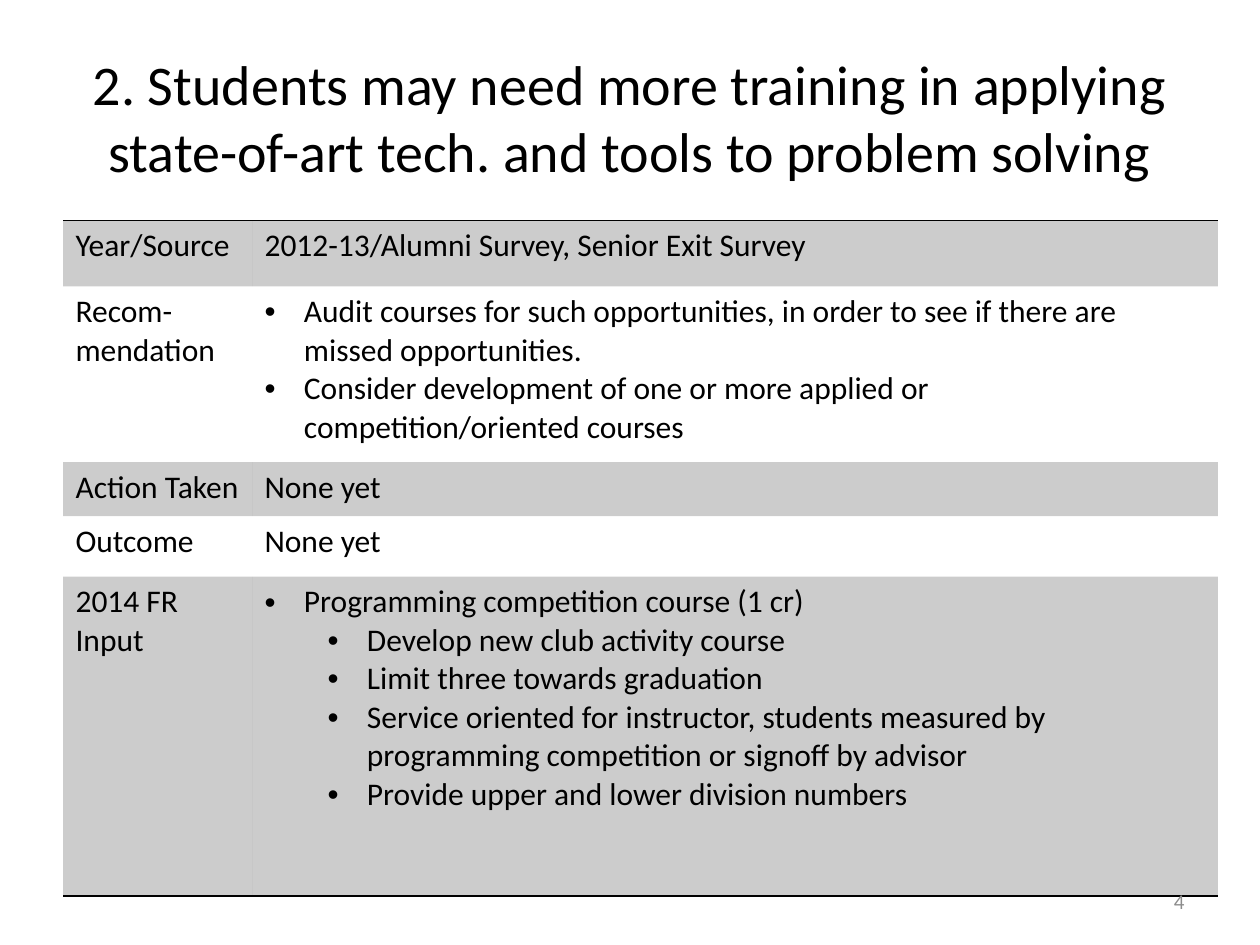
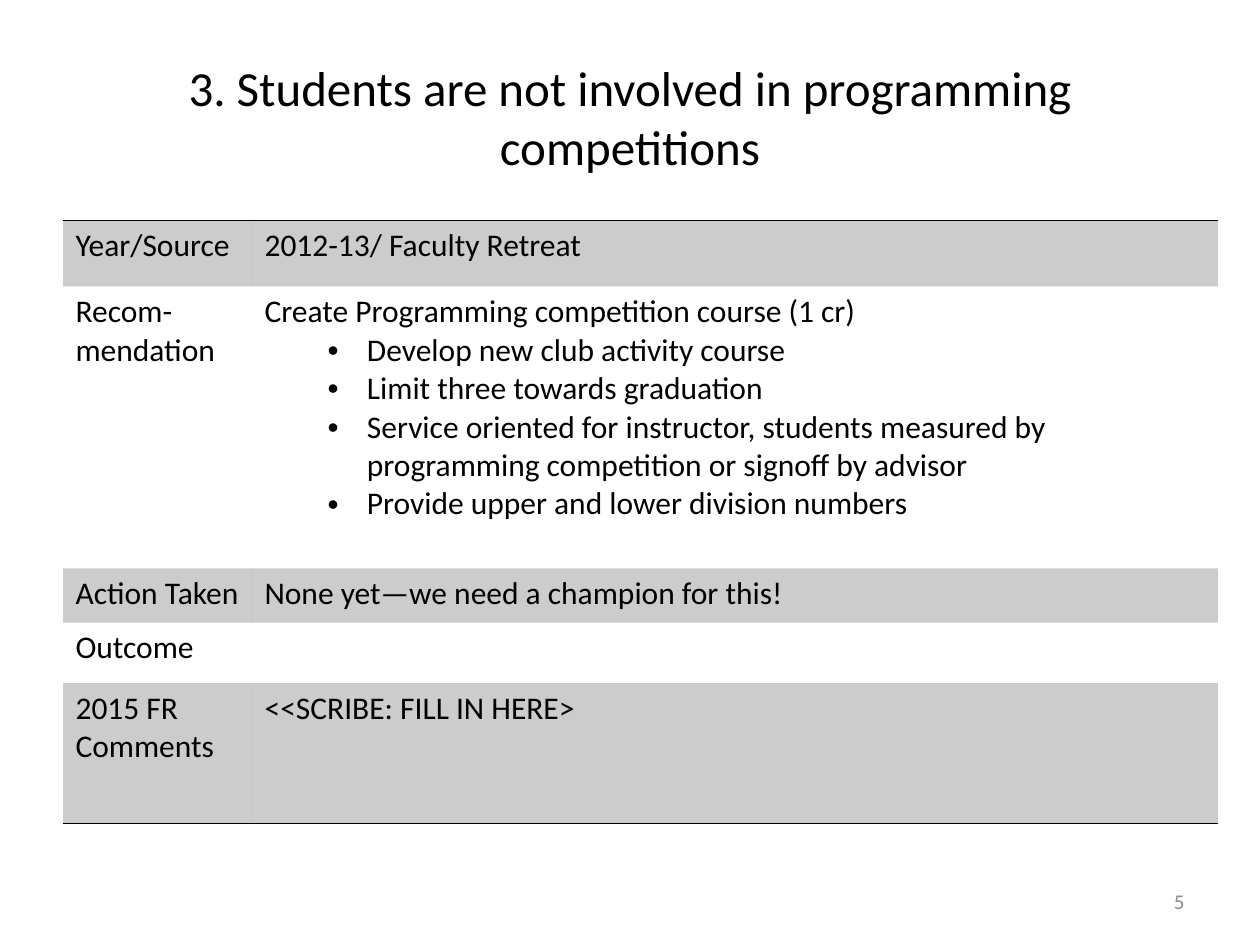
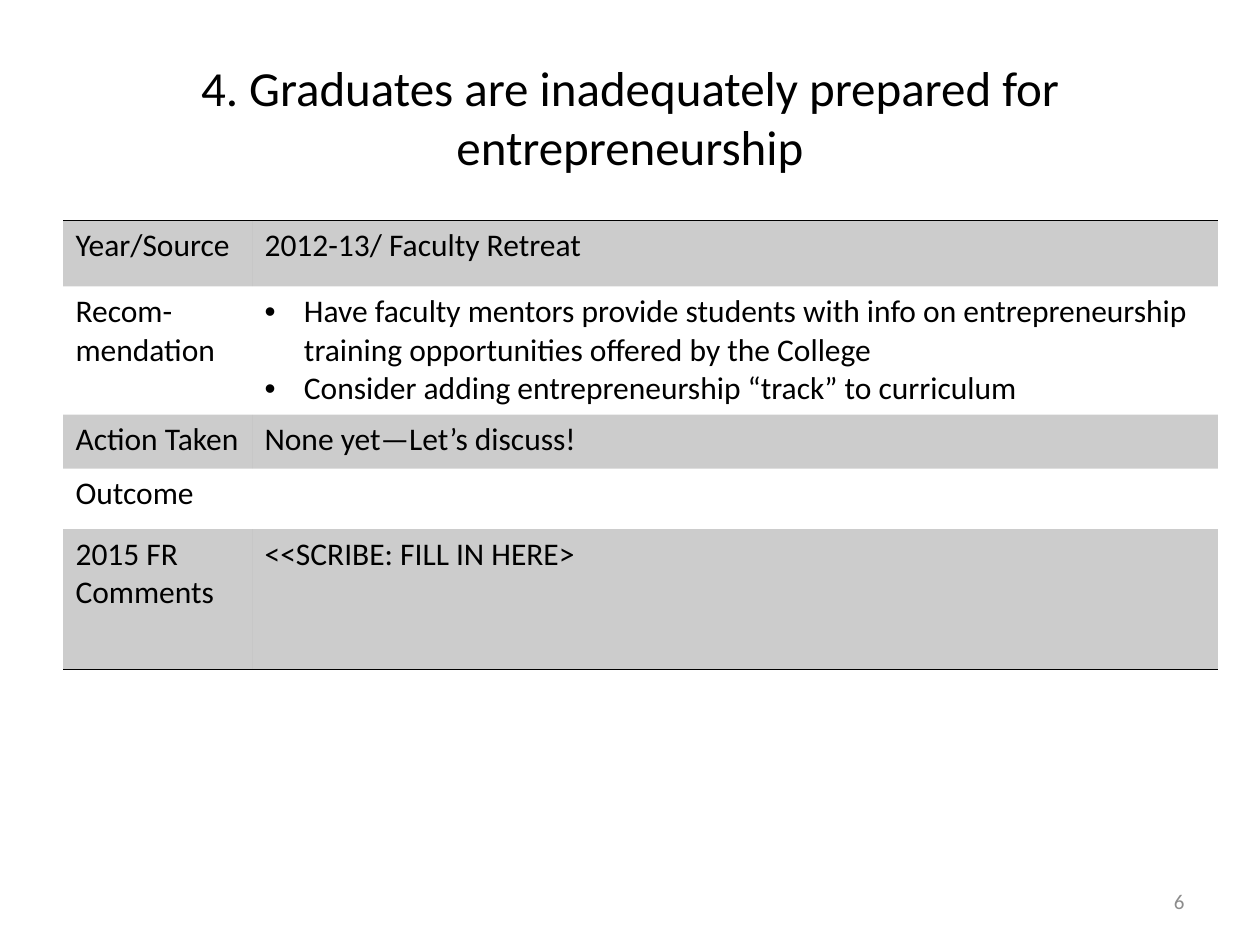
"""Build three faculty retreat slides, each tabulating one issue and its follow-up."""
from lxml import etree
from pptx import Presentation
from pptx.dml.color import RGBColor
from pptx.enum.text import MSO_ANCHOR, PP_ALIGN
from pptx.oxml.ns import qn
from pptx.util import Pt

MIDDLE = MSO_ANCHOR.MIDDLE
CENTER, RIGHT = PP_ALIGN.CENTER, PP_ALIGN.RIGHT
BLACK = RGBColor(0x00, 0x00, 0x00)
GREY = RGBColor(0x8C, 0x8C, 0x8C)
FONT = "Calibri"
NO_STYLE = "{2D5ABB26-0587-4C30-8999-92F81FD0307C}"
TITLE_ONLY = 5
PLAIN, BULLET, SUB_BULLET = range(3)
BULLET_MARGINS = {BULLET: 22.5, SUB_BULLET: 58.5}
BULLET_HANG = 22.5
COLUMN_WIDTHS = [108, 552]
FIRST_PAGE = 4

COMPETITION_STEPS = [
    (SUB_BULLET, "Develop new club activity course"),
    (SUB_BULLET, "Limit three towards graduation"),
    (SUB_BULLET, "Service oriented for instructor, students measured by "
                 "programming competition or signoff by advisor"),
    (SUB_BULLET, "Provide upper and lower division numbers"),
]

ISSUES = [
    {
        "title": "2. Students may need more training in applying "
                 "state-of-art tech. and tools to problem solving",
        "title_size": 32,
        "row_heights": [37.7, 100.4, 30.9, 34.6, 182.5],
        "source": "2012-13/Alumni Survey, Senior Exit Survey",
        "recommendation": [
            (BULLET, "Audit courses for such opportunities, in order to see "
                     "if there are missed opportunities."),
            (BULLET, "Consider development of one or more applied or "
                     "competition/oriented courses"),
        ],
        "action": "None yet",
        "outcome": "None yet",
        "retreat": "2014 FR Input",
        "comments": [(BULLET, "Programming competition course (1 cr)")] + COMPETITION_STEPS,
    },
    {
        "title": "3. Students are not involved in programming competitions",
        "title_size": 28,
        "row_heights": [37.7, 161.2, 30.9, 34.6, 80.2],
        "source": "2012-13/ Faculty Retreat",
        "recommendation": [(PLAIN, "Create Programming competition course (1 cr)")]
                          + COMPETITION_STEPS,
        "action": "None yet—we need a champion for this!",
        "outcome": "",
        "retreat": "2015 FR Comments",
        "comments": [(PLAIN, "<<SCRIBE: FILL IN HERE>")],
    },
    {
        "title": "4. Graduates are inadequately prepared for entrepreneurship",
        "title_size": 28,
        "row_heights": [37.7, 73.2, 30.9, 34.6, 80.2],
        "source": "2012-13/ Faculty Retreat",
        "recommendation": [
            (BULLET, "Have faculty mentors provide students with info on "
                     "entrepreneurship training opportunities offered by the College"),
            (BULLET, "Consider adding entrepreneurship “track” to curriculum"),
        ],
        "action": "None yet—Let’s discuss!",
        "outcome": "",
        "retreat": "2015 FR Comments",
        "comments": [(PLAIN, "<<SCRIBE: FILL IN HERE>")],
    },
]


def write(frame, lines, size, color=BLACK, align=None):
    """Fill a text frame with (level, text) lines in one font."""
    frame.text = "\n".join(text for level, text in lines)
    for paragraph, (level, text) in zip(frame.paragraphs, lines):
        paragraph.alignment = align
        paragraph.font.size = Pt(size)
        for run in paragraph.runs:
            run.font.name = FONT
            run.font.size = Pt(size)
            run.font.color.rgb = color
        if level != PLAIN:
            paragraph.level = level - BULLET
            properties = paragraph._p.get_or_add_pPr()
            properties.set("marL", str(Pt(BULLET_MARGINS[level])))
            properties.set("indent", str(-Pt(BULLET_HANG)))
            etree.SubElement(properties, qn("a:buFont"), typeface="Arial")
            etree.SubElement(properties, qn("a:buChar"), char="•")


def rule(cell, side):
    """Draw a black one-point border on one side of a cell."""
    line = etree.Element(qn(f"a:{side}"), w=str(Pt(1)))
    fill = etree.SubElement(line, qn("a:solidFill"))
    etree.SubElement(fill, qn("a:srgbClr"), val=str(BLACK))
    cell._tc.get_or_add_tcPr().insert(0, line)


prs = Presentation()
prs.slide_width, prs.slide_height = Pt(720), Pt(540)

for page, issue in enumerate(ISSUES, FIRST_PAGE):
    slide = prs.slides.add_slide(prs.slide_layouts[TITLE_ONLY])
    title = slide.shapes.title
    title.left, title.top, title.width, title.height = Pt(36), Pt(21.6), Pt(648), Pt(90)
    title.text_frame.vertical_anchor = MIDDLE
    write(title.text_frame, [(PLAIN, issue["title"])], issue["title_size"], align=CENTER)

    rows = [
        ([(PLAIN, "Year/Source")], [(PLAIN, issue["source"])]),
        ([(PLAIN, "Recom-"), (PLAIN, "mendation")], issue["recommendation"]),
        ([(PLAIN, "Action Taken")], [(PLAIN, issue["action"])]),
        ([(PLAIN, "Outcome")], [(PLAIN, issue["outcome"])]),
        ([(PLAIN, issue["retreat"])], issue["comments"]),
    ]
    heights = issue["row_heights"]
    table = slide.shapes.add_table(
        len(rows), len(COLUMN_WIDTHS), Pt(36), Pt(126),
        Pt(sum(COLUMN_WIDTHS)), Pt(sum(heights))).table
    table.first_row = table.horz_banding = False
    table._tbl.tblPr.find(qn("a:tableStyleId")).text = NO_STYLE
    for column, width in zip(table.columns, COLUMN_WIDTHS):
        column.width = Pt(width)

    for row_index, (row, height) in enumerate(zip(rows, heights)):
        table.rows[row_index].height = Pt(height)
        for column_index, lines in enumerate(row):
            cell = table.cell(row_index, column_index)
            write(cell.text_frame, lines, 18)
            if row_index % 2:
                cell.fill.background()
            else:
                cell.fill.solid()
                cell.fill.fore_color.rgb = BLACK
                shade = cell._tc.tcPr.find(".//" + qn("a:srgbClr"))
                etree.SubElement(shade, qn("a:alpha"), val="20000")
            if row_index == 0:
                rule(cell, "lnT")
            elif row_index == len(rows) - 1:
                rule(cell, "lnB")

    page_number = slide.shapes.add_textbox(Pt(516), Pt(500.5), Pt(168), Pt(28.75)).text_frame
    page_number.word_wrap = True
    page_number.vertical_anchor = MIDDLE
    write(page_number, [(PLAIN, str(page))], 12, GREY, RIGHT)

prs.save("out.pptx")
